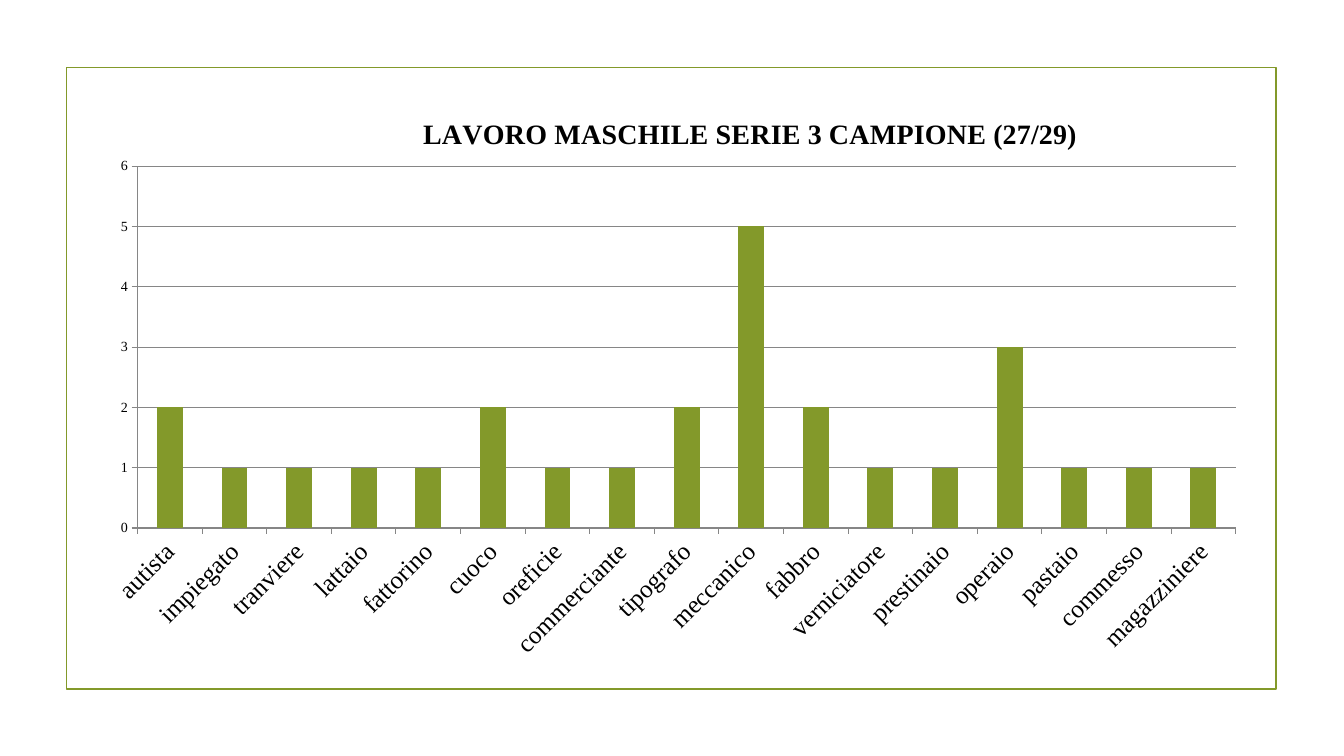
from lxml import etree
from pptx import Presentation
from pptx import util as u
from pptx.chart.data import CategoryChartData
from pptx.dml.color import RGBColor
from pptx.enum import chart as ch, shapes
from pptx.oxml.ns import qn

GREEN = RGBColor(0x83, 0x99, 0x2A)
GRAY = RGBColor(0x86, 0x86, 0x86)
BLACK = RGBColor(0, 0, 0)

JOBS = {
    "autista": 2, "impiegato": 1, "tranviere": 1, "lattaio": 1,
    "fattorino": 1, "cuoco": 2, "oreficie": 1, "commerciante": 1,
    "tipografo": 2, "meccanico": 5, "fabbro": 2, "verniciatore": 1,
    "prestinaio": 1, "operaio": 3, "pastaio": 1, "commesso": 1,
    "magazziniere": 1,
}


def layout(**spots):
    """Return a manual chart layout, given as fractions of the chart."""
    root = etree.Element(qn("c:layout"))
    man = etree.SubElement(root, qn("c:manualLayout"))
    for tag, val in spots.items():
        etree.SubElement(man, qn("c:" + tag)).set("val", str(val))
    return root


class Deck:
    font = "Times New Roman"

    def __init__(self, wide, high):
        self.prs = Presentation()
        self.prs.slide_width = u.Cm(wide)
        self.prs.slide_height = u.Cm(high)
        self.slide = self.prs.slides.add_slide(self.prs.slide_layouts[6])

    def frame(self, *box):
        rect = self.slide.shapes.add_shape(
            shapes.MSO_SHAPE.RECTANGLE, *map(u.Cm, box))
        rect.shadow.inherit = False
        rect.fill.background()
        rect.line.color.rgb = GREEN
        rect.line.width = u.Pt(1.25)

    def style(self, font, size, bold=False):
        font.name = self.font
        font.size = u.Pt(size)
        font.bold = bold
        font.color.rgb = BLACK

    def bars(self, title, vals, *box):
        data = CategoryChartData(number_format="General")
        data.categories = list(vals)
        data.add_series("Series 1", list(vals.values()))
        chart = self.slide.shapes.add_chart(
            ch.XL_CHART_TYPE.COLUMN_STACKED, *map(u.Cm, box), data).chart
        self.style(chart.font, 10)
        chart.has_legend = False

        plot = chart.plots[0]
        plot.vary_by_categories = False
        plot.gap_width = 150
        plot.overlap = 100
        fill = plot.series[0].format.fill
        fill.solid()
        fill.fore_color.rgb = GREEN

        self.axes(chart)
        self.title(chart, title)
        area = chart.element.find(".//" + qn("c:plotArea")) if hasattr(
            chart, "element") else chart._chartSpace.find(
            ".//" + qn("c:plotArea"))
        for old in area.findall(qn("c:layout")):
            area.remove(old)
        area.insert(0, layout(layoutTarget="inner", xMode="edge",
                              yMode="edge", x=0.04, y=0.135, w=0.94, h=0.622))

    def axes(self, chart):
        cat, val = chart.category_axis, chart.value_axis
        for axis, size in ((cat, 18), (val, 10)):
            self.style(axis.tick_labels.font, size)
            axis.major_tick_mark = ch.XL_TICK_MARK.OUTSIDE
            axis.format.line.color.rgb = GRAY
            axis.format.line.width = u.Pt(0.75)
        turn = cat._element.find(qn("c:txPr")).find(qn("a:bodyPr"))
        turn.set("rot", "-2700000")
        val.minimum_scale, val.maximum_scale, val.major_unit = 0, 6, 1
        val.has_major_gridlines = True
        val.major_gridlines.format.line.color.rgb = GRAY
        val.major_gridlines.format.line.width = u.Pt(0.75)

    def title(self, chart, words):
        head = chart.chart_title
        par = head.text_frame.paragraphs[0]
        par.text = words
        self.style(par.runs[0].font, 20, True)
        head.include_in_layout = False
        node = head._element
        for old in node.findall(qn("c:layout")):
            node.remove(old)
        node.find(qn("c:tx")).addnext(
            layout(xMode="edge", yMode="edge", x=0.28, y=0.04))


def main():
    deck = Deck(33.87, 19.05)
    deck.frame(1.68, 1.7, 30.48, 15.67)
    deck.bars("LAVORO MASCHILE SERIE 3 CAMPIONE (27/29)", JOBS,
              2.29, 2.21, 29.44, 14.66)
    deck.prs.save("out.pptx")


if __name__ == "__main__":
    main()
